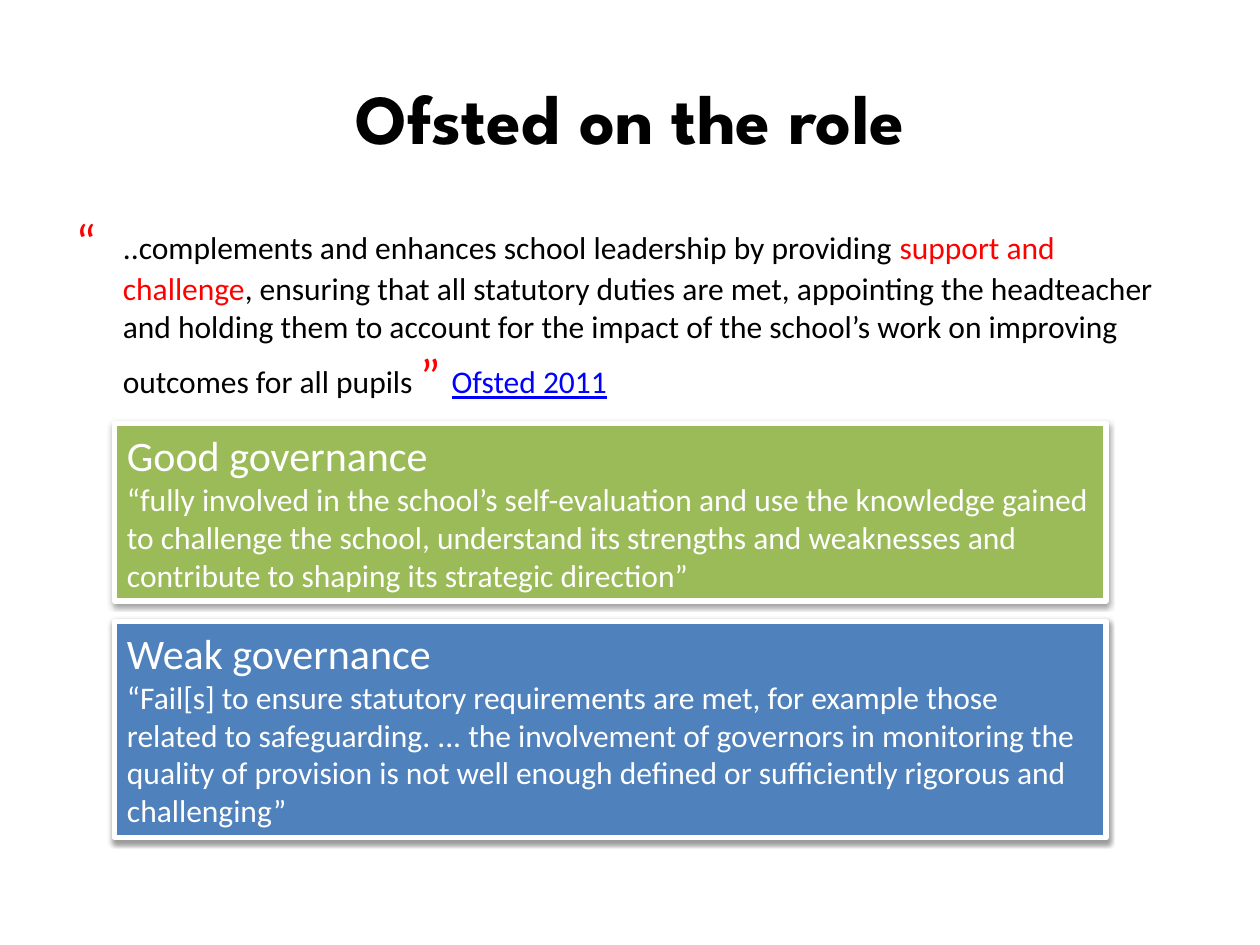
from lxml import etree
from pptx import Presentation
from pptx.dml.color import RGBColor
from pptx.enum.shapes import MSO_SHAPE
from pptx.enum.text import MSO_ANCHOR, MSO_AUTO_SIZE, PP_ALIGN
from pptx.oxml import parse_xml
from pptx.oxml.ns import qn
from pptx.util import Pt

BLACK = RGBColor(0x00, 0x00, 0x00)
WHITE = RGBColor(0xFF, 0xFF, 0xFF)
RED = RGBColor(0xFF, 0x00, 0x00)
LINK_BLUE = RGBColor(0x00, 0x00, 0xFF)
GREEN = RGBColor(0x9B, 0xBB, 0x59)
BLUE = RGBColor(0x4F, 0x81, 0xBD)

RECTANGLE = MSO_SHAPE.RECTANGLE
TOP, MIDDLE = MSO_ANCHOR.TOP, MSO_ANCHOR.MIDDLE
LEFT, CENTER = PP_ALIGN.LEFT, PP_ALIGN.CENTER
NO_AUTOFIT, GROW = MSO_AUTO_SIZE.NONE, MSO_AUTO_SIZE.SHAPE_TO_FIT_TEXT

TITLE_FONT, BODY_FONT = "League Spartan", "Calibri"
QUOTE_SIZE, HEADING_SIZE, TEXT_SIZE = 28, 24, 18
QUOTE_INDENT = 27

DRAWING_NS = "http://schemas.openxmlformats.org/drawingml/2006/main"
SHADOW_XML = (
    f'<a:outerShdw xmlns:a="{DRAWING_NS}" blurRad="40000" dist="20000" '
    'dir="5400000" rotWithShape="0"><a:srgbClr val="000000">'
    '<a:alpha val="38000"/></a:srgbClr></a:outerShdw>'
)


def place(shape, left, top, width, height):
    shape.left, shape.top = Pt(left), Pt(top)
    shape.width, shape.height = Pt(width), Pt(height)


def fill_title(title, text):
    place(title, 36, 21.6, 648, 90)
    frame = title.text_frame
    frame.text = text
    frame.auto_size = NO_AUTOFIT
    frame.vertical_anchor = MIDDLE
    paragraph = frame.paragraphs[0]
    paragraph.alignment = CENTER
    font = paragraph.font
    font.name, font.size, font.bold = TITLE_FONT, Pt(40), True
    font.color.rgb = BLACK


def fill_quotation(body, pieces):
    """Write one hanging paragraph from (text, size, colour) pieces."""
    place(body, 36, 116.64, 648, 118.8)
    frame = body.text_frame
    frame.auto_size = NO_AUTOFIT
    paragraph = frame.paragraphs[0]
    paragraph.space_before = Pt(0)

    # Hanging indent without a bullet
    properties = paragraph._p.get_or_add_pPr()
    properties.set("marL", str(Pt(QUOTE_INDENT)))
    properties.set("indent", str(-Pt(QUOTE_INDENT)))
    etree.SubElement(properties, qn("a:buNone"))
    paragraph.font.name = BODY_FONT

    for text, size, color in pieces:
        run = paragraph.add_run()
        run.text = text
        run.font.size = Pt(size)
        run.font.color.rgb = color
        if color == LINK_BLUE:
            run.font.underline = True


def add_panel(slide, top, height, color, heading, quotation):
    panel = slide.shapes.add_shape(
        RECTANGLE, Pt(65.5), Pt(top), Pt(566.6), Pt(height))
    panel.fill.solid()
    panel.fill.fore_color.rgb = color
    panel.line.color.rgb = WHITE
    panel.line.width = Pt(3)

    # Soft shadow below the panel
    panel.shadow.inherit = False
    panel._element.spPr.find(qn("a:effectLst")).append(parse_xml(SHADOW_XML))

    frame = panel.text_frame
    frame.word_wrap = True
    frame.auto_size = GROW
    frame.vertical_anchor = TOP
    frame.text = f"{heading}\n{quotation}"
    for paragraph, size in zip(frame.paragraphs, (HEADING_SIZE, TEXT_SIZE)):
        paragraph.alignment = LEFT
        paragraph.font.name = BODY_FONT
        paragraph.font.size = Pt(size)
        paragraph.font.color.rgb = WHITE


def main():
    presentation = Presentation()
    presentation.slide_width, presentation.slide_height = Pt(720), Pt(540)
    slide = presentation.slides.add_slide(presentation.slide_layouts[1])

    # Title and definition of the role
    fill_title(slide.shapes.title, "Ofsted on the role")
    fill_quotation(slide.placeholders[1], [
        ("“", QUOTE_SIZE, RED),
        ("\t..complements and enhances school leadership by providing ",
         TEXT_SIZE, BLACK),
        ("support and challenge", TEXT_SIZE, RED),
        (", ensuring that all statutory duties are met, appointing the "
         "headteacher and holding them to account for the impact of the "
         "school’s work on improving outcomes for all pupils ",
         TEXT_SIZE, BLACK),
        ("” ", QUOTE_SIZE, RED),
        ("Ofsted 2011", TEXT_SIZE, LINK_BLUE),
    ])

    # Good and weak governance
    add_panel(
        slide, 241.9, 101.5, GREEN, "Good governance",
        "“fully involved in the school’s self-evaluation and use the "
        "knowledge gained to challenge the school, understand its strengths "
        "and weaknesses and contribute to shaping its strategic direction”")
    add_panel(
        slide, 355, 123.8, BLUE, "Weak governance",
        "“Fail[s] to ensure statutory requirements are met, for example "
        "those related to safeguarding. ... the involvement of governors in "
        "monitoring the quality of provision is not well enough defined or "
        "sufficiently rigorous and challenging”")

    presentation.save("out.pptx")


if __name__ == "__main__":
    main()
